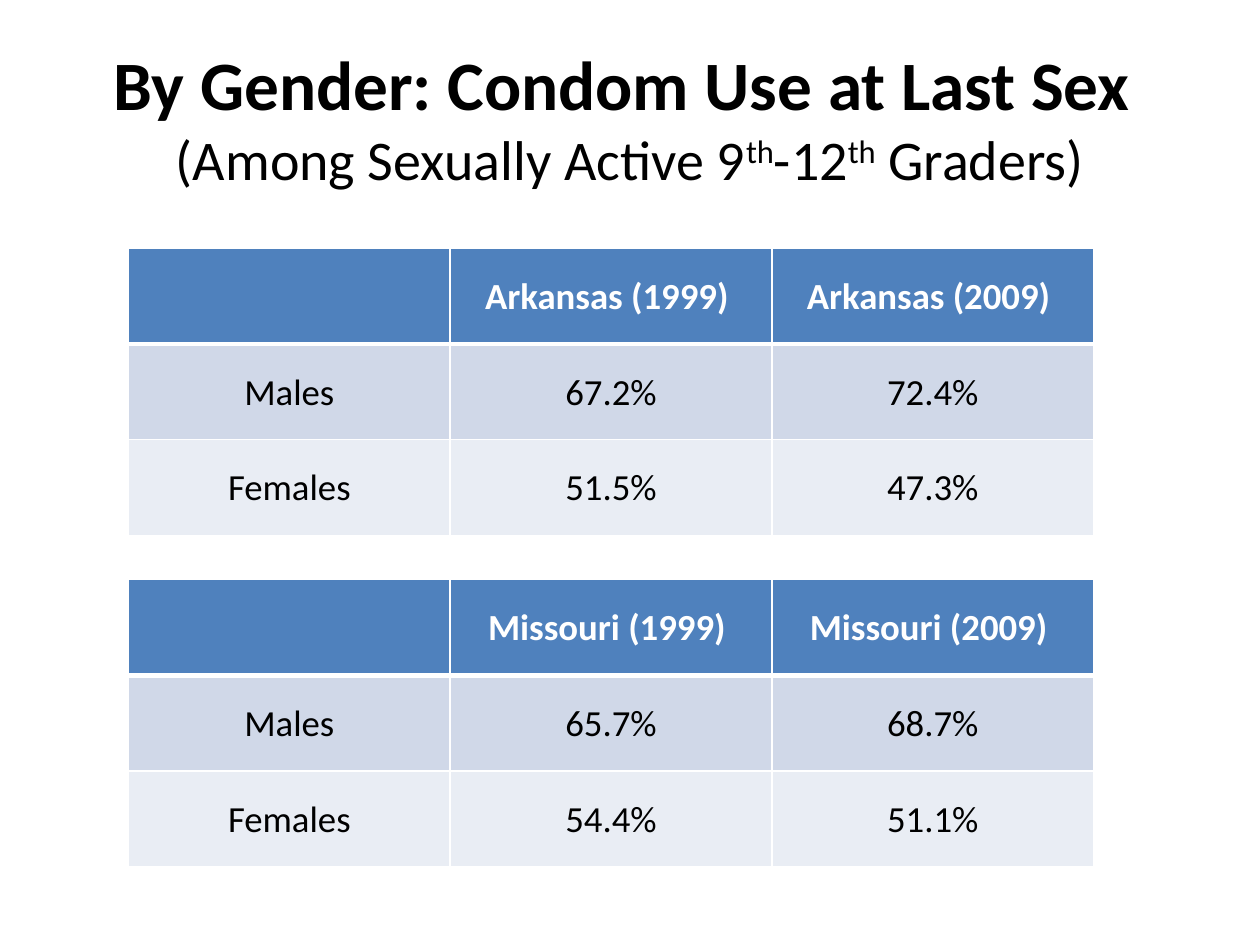
from dataclasses import dataclass

from lxml.etree import SubElement
from pptx import Presentation
from pptx.dml.color import RGBColor
from pptx.enum.text import MSO_ANCHOR, PP_ALIGN
from pptx.oxml.ns import qn
from pptx.util import Inches, Pt


@dataclass(frozen=True)
class Theme:
    font: str = "Calibri"
    text: str = "000000"
    white: str = "FFFFFF"
    header: str = "4F81BD"
    bands: tuple = ("D0D8E8", "E9EDF4")
    title_size: float = 39.6
    subtitle_size: float = 32
    cell_size: float = 21
    rule: float = 1
    header_rule: float = 3


THEME = Theme()


def add_run(p, text, size, color, bold=False, baseline=0):
    r = p.add_run()
    r.text = text
    r.font.name = THEME.font
    r.font.size = Pt(size)
    r.font.bold = bold
    r.font.color.rgb = RGBColor.from_string(color)
    if baseline:
        r.font._element.set("baseline", str(baseline * 1000))


def add_title(s, title, subtitle_runs):
    sp = s.shapes.add_textbox(Inches(0.5), Inches(0.3), Inches(9), Inches(1.25))
    tf = sp.text_frame
    tf.word_wrap = True
    tf.vertical_anchor = MSO_ANCHOR.MIDDLE
    p = tf.paragraphs[0]
    p.alignment = PP_ALIGN.CENTER
    add_run(p, title, THEME.title_size, THEME.text, bold=True)
    p.add_line_break()
    for text, baseline in subtitle_runs:
        add_run(p, text, THEME.subtitle_size, THEME.text, baseline=baseline)


def set_borders(cell, top, bottom):
    tc_pr = cell._tc.get_or_add_tcPr()
    widths = {"lnL": THEME.rule, "lnR": THEME.rule, "lnT": top, "lnB": bottom}
    for side, width in widths.items():
        ln = SubElement(tc_pr, qn(f"a:{side}"), w=str(Pt(width)))
        fill = SubElement(ln, qn("a:solidFill"))
        SubElement(fill, qn("a:srgbClr"), val=THEME.white)


def style_cell(cell, text, row):
    is_header = row == 0
    set_borders(
        cell,
        THEME.header_rule if row == 1 else THEME.rule,
        THEME.header_rule if is_header else THEME.rule,
    )
    fill = THEME.header if is_header else THEME.bands[(row - 1) % 2]
    cell.fill.solid()
    cell.fill.fore_color.rgb = RGBColor.from_string(fill)
    cell.vertical_anchor = MSO_ANCHOR.MIDDLE
    cell.margin_left = cell.margin_right = cell.margin_top = Inches(0.01)
    cell.margin_bottom = 0
    p = cell.text_frame.paragraphs[0]
    p.alignment = PP_ALIGN.CENTER
    if text:
        color = THEME.white if is_header else THEME.text
        add_run(p, text, THEME.cell_size, color, bold=is_header)


def add_state_table(s, top, state, males, females):
    rows = [
        ("", f"{state} (1999) ", f"{state} (2009) "),
        ("Males", *males),
        ("Females", *females),
    ]
    table = s.shapes.add_table(
        3, 3, Inches(1.02), Inches(top), Inches(7.66), Inches(2.28)
    ).table
    for i, values in enumerate(rows):
        for j, text in enumerate(values):
            style_cell(table.cell(i, j), text, i)


def main():
    prs = Presentation()
    prs.slide_width, prs.slide_height = Inches(10), Inches(7.5)
    s = prs.slides.add_slide(prs.slide_layouts[6])
    add_title(
        s,
        "By Gender: Condom Use at Last Sex ",
        [
            ("(Among Sexually Active 9", 0),
            ("th", 30),
            ("-12", 0),
            ("th", 30),
            (" Graders)", 0),
        ],
    )
    add_state_table(s, 1.97, "Arkansas", ("67.2%", "72.4%"), ("51.5%", "47.3%"))
    add_state_table(s, 4.6, "Missouri", ("65.7%", "68.7%"), ("54.4%", "51.1%"))
    prs.save("out.pptx")


if __name__ == "__main__":
    main()
